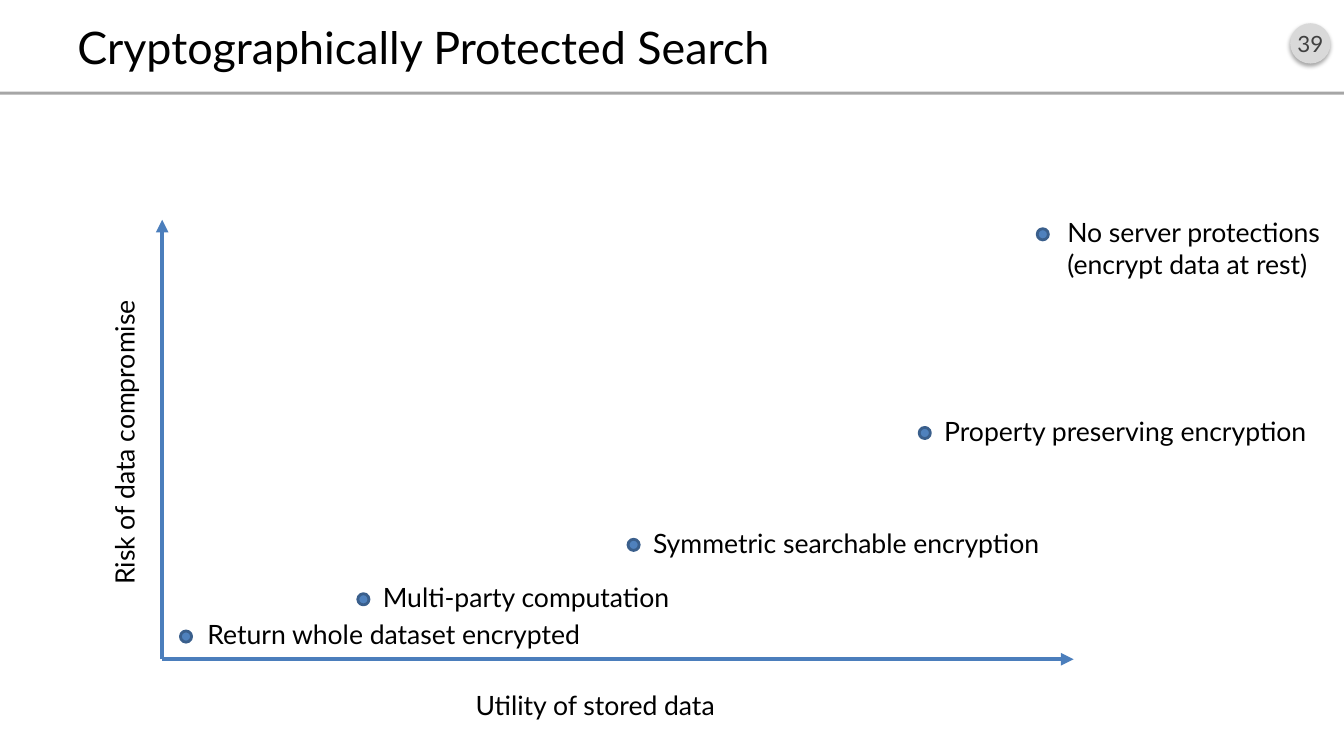
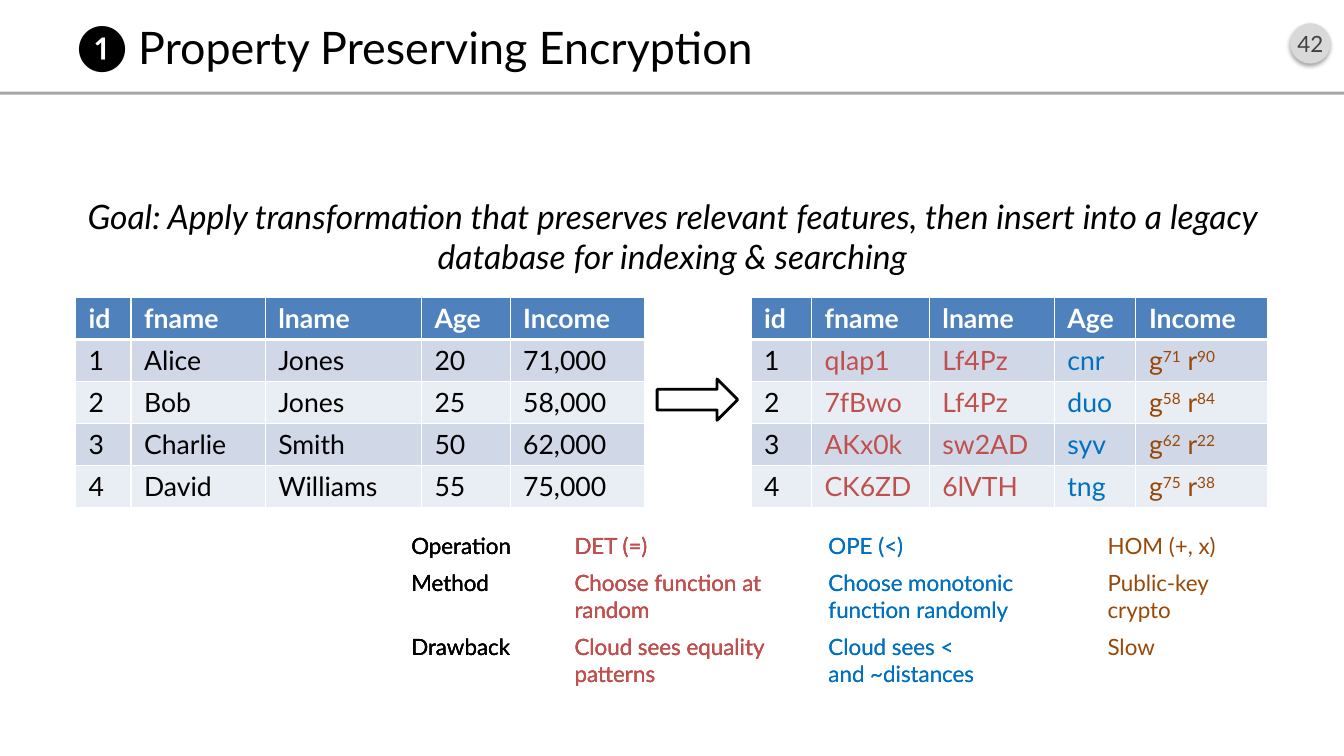
from lxml.etree import SubElement
from pptx import Presentation
from pptx.dml.color import RGBColor
from pptx.enum.shapes import MSO_CONNECTOR as LINK, MSO_SHAPE as KIND
from pptx.enum.text import MSO_ANCHOR as ANCHOR, MSO_AUTO_SIZE as FIT, PP_ALIGN as ALIGN
from pptx.oxml import parse_xml
from pptx.oxml.ns import nsdecls, qn
from pptx.util import Pt

FONT = "Lato"
INK, WHITE, GRAY = "000000", "FFFFFF", "404040"
BADGE, RULE = "D9D9D9", "A6A6A6"
BLUE, EDGE, AXIS = "4F81BD", "3A5F8C", "4B7EBC"
RED, SKY, BROWN = "C0504D", "0070C0", "984807"
BANDS = ("D0D8E8", "E9EDF4")

POINTS = (
    ("Return whole dataset encrypted", 128.9, 450.7, 12.2, 285),
    ("No server protections\n(encrypt data at rest)", 740.9, 163.4, 14.4, 200),
    ("Multi-party computation", 255.6, 424.1, 10.8, 222),
    ("Symmetric searchable encryption", 448.6, 385.2, 10.8, 294),
    ("Property preserving encryption", 656.6, 305.3, 10.8, 277),
)
HEAD = ("id", "fname", "lname", "Age", "Income")
PLAIN = (
    HEAD,
    ("1", "Alice", "Jones", "20", "71,000"),
    ("2", "Bob", "Jones", "25", "58,000"),
    ("3", "Charlie", "Smith", "50", "62,000"),
    ("4", "David", "Williams", "55", "75,000"),
)
CIPHER = (
    HEAD,
    ("1", "qIap1", "Lf4Pz", "cnr", "g^71^ r^90"),
    ("2", "7fBwo", "Lf4Pz", "duo", "g^58^ r^84"),
    ("3", "AKx0k", "sw2AD", "syv", "g^62^ r^22"),
    ("4", "CK6ZD", "6lVTH", "tng", "g^75^ r^38"),
)
LEGEND = (
    ("Operation", "DET (=)", "OPE (<)", "HOM (+, x)"),
    ("Method", "Choose function at random", "Choose monotonic function randomly",
     "Public-key crypto"),
    ("Drawback", "Cloud sees equality patterns", "Cloud sees <\nand ~distances", "Slow"),
)


def hue(code):
    """Turn a hex string into a colour."""
    return RGBColor.from_string(code)


def box(*sides):
    """Turn left, top, width and height in points into lengths."""
    return [Pt(side) for side in sides]


def write(frame, words, size=19, color=INK, bold=False, italic=False, align=ALIGN.LEFT):
    """Fill a text frame; carets enclose superscripts and newlines break lines."""
    para = frame.paragraphs[0]
    para.alignment = align
    for row, line in enumerate(words.split("\n")):
        if row:
            para.add_line_break()
        for part, piece in enumerate(line.split("^")):
            run = para.add_run()
            run.text = piece
            font = run.font
            font.name, font.size = FONT, Pt(size)
            font.bold, font.italic = bold, italic
            font.color.rgb = hue(color)
            if part % 2:
                run._r.get_or_add_rPr().set("baseline", "30000")


def label(shapes, words, place, wrap=False, turn=0, **style):
    """Add a text box that fits its text."""
    item = shapes.add_textbox(*box(*place))
    item.rotation = turn
    item.text_frame.word_wrap = wrap
    item.text_frame.auto_size = FIT.SHAPE_TO_FIT_TEXT
    write(item.text_frame, words, **style)


def form(shapes, kind, place, fill, line=None):
    """Add a flat preset shape with an optional outline."""
    item = shapes.add_shape(kind, *box(*place))
    item.shadow.inherit = False
    item.fill.solid()
    item.fill.fore_color.rgb = hue(fill)
    if line:
        item.line.color.rgb = hue(line)
        item.line.width = Pt(2)
    else:
        item.line.fill.background()
    return item


def arrow(shapes, *ends):
    """Draw an axis that ends in an arrowhead."""
    item = shapes.add_connector(LINK.STRAIGHT, *box(*ends))
    item.line.color.rgb = hue(AXIS)
    item.line.width = Pt(3)
    SubElement(item.line._get_or_add_ln(), qn("a:tailEnd"), type="triangle")
    SubElement(item.element.spPr, qn("a:effectLst"))


def point(shapes, words, left, top, gap, wide):
    """Group a dot with the label at its right."""
    group = shapes.add_group_shape().shapes
    form(group, KIND.OVAL, (left, top, 8, 8), BLUE, EDGE)
    tall = 30 + 24 * words.count("\n")
    label(group, words, (left + gap, top - 12.6, wide, tall))


def edge(cell, **sides):
    """Draw white cell borders of the given widths."""
    for spot, (side, width) in enumerate(sides.items()):
        line = parse_xml(
            f'<a:{side} {nsdecls("a")} w="{Pt(width)}"><a:solidFill>'
            f'<a:srgbClr val="{WHITE}"/></a:solidFill></a:{side}>')
        cell._tc.get_or_add_tcPr().insert(spot, line)


def grid(shapes, left, top, cols, rows):
    """Add an unbanded table and return it."""
    frame = shapes.add_table(len(rows), len(cols), *box(left, top, sum(cols), sum(rows)))
    table = frame.table
    table.first_row = table.horz_banding = False
    for col, wide in zip(table.columns, cols):
        col.width = Pt(wide)
    for row, tall in zip(table.rows, rows):
        row.height = Pt(tall)
    return table


def put(cell, words, fill=None, **style):
    """Write one table cell and set its fill."""
    cell.margin_left = cell.margin_right = Pt(9.4)
    cell.margin_top = cell.margin_bottom = Pt(3.6)
    if fill:
        cell.fill.solid()
        cell.fill.fore_color.rgb = hue(fill)
    else:
        cell.fill.background()
    write(cell.text_frame, words, **style)


def sheet(shapes, left, cols, data, inks):
    """Add a data table with a header row and banded rows."""
    table = grid(shapes, left, 212.4, cols, [30] * len(data))
    for row, line in enumerate(data):
        for col, words in enumerate(line):
            cell = table.cell(row, col)
            if row:
                put(cell, words, BANDS[(row - 1) % 2], color=inks[col])
            else:
                put(cell, words, BLUE, color=WHITE, bold=True)
            edge(cell, lnL=1, lnR=1, lnT=3 if row == 1 else 1, lnB=1 if row else 3)


def legend(shapes, count):
    """Add the first columns of the legend."""
    cols = (116.6, 181.4, 199.4, 124.6)[:count]
    table = grid(shapes, 284.4, 376.6, cols, (26.6, 45.4, 45.4))
    for row, line in enumerate(LEGEND):
        for col, color in enumerate((INK, RED, SKY, BROWN)[:count]):
            put(table.cell(row, col), line[col], size=16, color=color)


def style(deck):
    """Set the title place and the rule on the layout and return it."""
    layout = deck.slide_layouts[5]
    title = layout.placeholders[0]
    title.left, title.top, title.width, title.height = box(48, 11.5, 864, 43.2)
    title.text_frame.vertical_anchor = ANCHOR.MIDDLE
    return layout


def start(deck, layout, words, number):
    """Add a slide with its title, rule and page badge."""
    slide = deck.slides.add_slide(layout)
    shapes = slide.shapes
    write(shapes.title.text_frame, words, size=32)
    form(shapes, KIND.RECTANGLE, (0, 65.5, 960, 2.2), RULE)
    badge = form(shapes, KIND.OVAL, (921.6, 16.6, 28.8, 28.8), BADGE)
    glow = badge.element.spPr.find(qn("a:effectLst"))
    glow.append(parse_xml(
        f'<a:outerShdw {nsdecls("a")} blurRad="{Pt(3.1)}" dist="{Pt(1.8)}" dir="5400000">'
        f'<a:srgbClr val="{INK}"><a:alpha val="35000"/></a:srgbClr></a:outerShdw>'))
    frame = badge.text_frame
    frame.margin_left = frame.margin_right = 0
    frame.vertical_anchor = ANCHOR.MIDDLE
    write(frame, number, size=16, color=GRAY, align=ALIGN.CENTER)
    return shapes


def search(deck, layout):
    """Build the risk and utility slide."""
    shapes = start(deck, layout, "Cryptographically Protected Search", "39")
    arrow(shapes, 115.9, 470.9, 115.9, 157)
    arrow(shapes, 115.9, 470.9, 766.8, 470.9)
    label(shapes, "Utility of stored data", (332.6, 488.2, 188.6, 30))
    label(shapes, "Risk of data compromise", (-22.3, 298.8, 221.8, 30), turn=270)
    for item in POINTS:
        point(shapes, *item)


def crypt(deck, layout):
    """Build the property preserving encryption slide."""
    shapes = start(deck, layout, "❶ Property Preserving Encryption", "42")
    label(shapes, "Goal: Apply transformation that preserves relevant features, "
          "then insert into a legacy database for indexing & searching",
          (54, 136.1, 852.5, 65.5), wrap=True, size=24, italic=True, align=ALIGN.CENTER)
    sheet(shapes, 54, (39.6, 95.8, 111.6, 63.4, 95.8), PLAIN, [INK] * 5)
    sheet(shapes, 536.4, (43.2, 84.2, 89.3, 58.3, 94.3), CIPHER,
          (INK, RED, RED, SKY, BROWN))
    form(shapes, KIND.RIGHT_ARROW, (469.4, 270.7, 57.6, 29.5), WHITE, INK)
    for count in (2, 3, 4):
        legend(shapes, count)


def main():
    """Build and save the deck."""
    deck = Presentation()
    deck.slide_width, deck.slide_height = Pt(960), Pt(540)
    layout = style(deck)
    search(deck, layout)
    crypt(deck, layout)
    deck.save("out.pptx")


if __name__ == "__main__":
    main()
